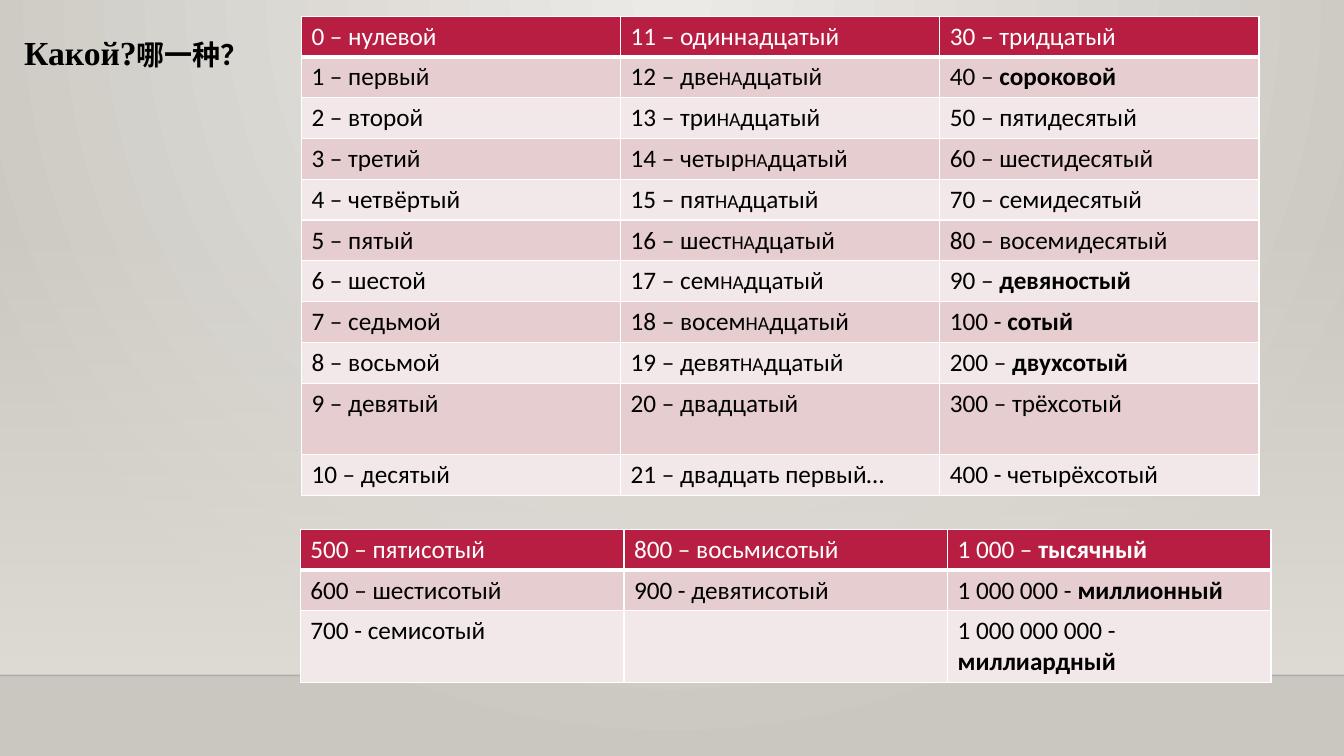
from dataclasses import dataclass

from lxml.etree import SubElement
from pptx import Presentation
from pptx.dml.color import RGBColor
from pptx.enum.shapes import MSO_CONNECTOR as Connector, MSO_SHAPE as Preset
from pptx.enum.text import MSO_ANCHOR as Anchor, MSO_AUTO_SIZE as AutoSize, PP_ALIGN as Align
from pptx.oxml.ns import qn
from pptx.slide import Slide
from pptx.table import _Cell as Cell
from pptx.util import Inches, Length, Pt

COLOURS = {
    "header": "B71E42",
    "band_dark": "E6CDCF",
    "band_light": "F3E8E9",
    "border": "FFFFFF",
    "header_text": "FFFFFF",
    "text": "000000",
    "glow": "ECEAE7",
    "wall": "CAC7C1",
    "floor": "DFDBD5",
    "horizon": "000001",
}
SLIDE_WIDTH, SLIDE_HEIGHT = Inches(13.333), Inches(7.5)
ROW, TALL_ROW = 5.4, 9.47
FLOOR_TOP, HORIZON = 29.47, 89.33


@dataclass
class NumberTable:
    """Position in percent of the slide; "|" parts runs, "*" marks a bold one."""
    left: float
    top: float
    width: float
    row_heights: list[float]
    rows: list[list[str]]


ORDINALS = NumberTable(22.43, 2.13, 71.25, [ROW] * 9 + [TALL_ROW, ROW], [
    ["0 – нулевой", "11 – одиннадцатый", "30 – тридцатый"],
    ["1 – первый", "12 – две|НА|дцатый", "40 – |*сороковой"],
    ["2 – второй", "13 – три|НА|дцатый", "50 – пятидесятый"],
    ["3 – третий", "14 – четыр|НА|дцатый", "60 – шестидесятый"],
    ["4 – четвёртый", "15 – пят|НА|дцатый", "70 – семидесятый"],
    ["5 – пятый", "16 – шест|НА|дцатый", "80 – восемидесятый"],
    ["6 – шестой", "17 – сем|НА|дцатый", "90 – |*девяностый"],
    ["7 – седьмой", "18 – восем|НА|дцатый", "100 - |*сотый"],
    ["8 – восьмой", "19 – девят|НА|дцатый", "200 – |*двухсотый"],
    ["9 – девятый", "20 – двадцатый", "300 – трёхсотый"],
    ["10 – десятый", "21 – двадцать первый…", "400 - четырёхсотый"],
])
LARGE_ORDINALS = NumberTable(22.35, 70, 72.23, [ROW, ROW, TALL_ROW], [
    ["500 – пятисотый", "800 – восьмисотый", "1 000 – |*тысячный"],
    ["600 – шестисотый", "900 - девятисотый", "1 000 000 - |*миллионный"],
    ["700 - семисотый", "", "1 000 000 000 - |*миллиардный"],
])


def across(percent: float) -> Length:
    return Length(round(SLIDE_WIDTH * percent / 100))


def down(percent: float) -> Length:
    return Length(round(SLIDE_HEIGHT * percent / 100))


def colour(name: str) -> RGBColor:
    return RGBColor.from_string(COLOURS[name])


def set_alpha(element, percent: int) -> None:
    rgb = next(element.iter(qn("a:srgbClr")))
    SubElement(rgb, qn("a:alpha"), val=str(percent * 1000))


def set_values(target, values: dict) -> None:
    for name, value in values.items():
        setattr(target, name, value)


def add_run(paragraph, text: str, size: int, font: str, bold: bool, colour_name: str) -> None:
    run = paragraph.add_run()
    run.text = text
    set_values(run.font, {"size": Pt(size), "name": font, "bold": bold})
    run.font.color.rgb = colour(colour_name)


def draw_background(slide: Slide) -> None:
    # Round glow from the top centre
    fill = slide.background.fill
    fill.gradient()
    for stop, name in zip(fill.gradient_stops, ("glow", "wall")):
        stop.color.rgb = colour(name)
    gradient = next(slide.element.iter(qn("a:gradFill")))
    gradient.remove(gradient.find(qn("a:lin")))
    circle = SubElement(gradient, qn("a:path"), path="circle")
    SubElement(circle, qn("a:fillToRect"), l="43000", t="0", r="43000", b="100000")

    # Wall fading in towards the floor
    wall = slide.shapes.add_shape(Preset.RECTANGLE, 0, down(FLOOR_TOP),
                                  SLIDE_WIDTH, down(HORIZON - FLOOR_TOP))
    wall.shadow.inherit = False
    wall.line.fill.background()
    wall.fill.gradient()
    wall.fill.gradient_angle = 270
    for stop in wall.fill.gradient_stops:
        stop.color.rgb = colour("floor")
    set_alpha(wall.element.spPr, 0)

    # Horizon line
    horizon = slide.shapes.add_connector(Connector.STRAIGHT, 0, down(HORIZON),
                                         SLIDE_WIDTH, down(HORIZON))
    horizon.line.width = Pt(1)
    horizon.line.color.rgb = colour("horizon")
    set_alpha(horizon.element.spPr, 20)
    SubElement(horizon.element.spPr, qn("a:effectLst"))


def draw_title(slide: Slide) -> None:
    title = slide.shapes.title
    set_values(title, {"left": across(1.05), "top": down(2.8),
                       "width": across(18.38), "height": down(7.07)})
    set_values(title.text_frame, {"word_wrap": False, "vertical_anchor": Anchor.TOP,
                                  "auto_size": AutoSize.SHAPE_TO_FIT_TEXT})
    paragraph = title.text_frame.paragraphs[0]
    set_values(paragraph, {"alignment": Align.LEFT, "line_spacing": 1.15,
                           "space_before": Pt(0), "space_after": Pt(10)})
    for text, size in (("Какой?", 24), ("哪一种？", 20)):
        add_run(paragraph, text, size, "Times New Roman", True, "text")


def set_borders(cell: Cell, bottom_width: int) -> None:
    properties = cell._tc.get_or_add_tcPr()
    widths = {"L": 1, "R": 1, "T": 1, "B": bottom_width}
    for index, (side, width) in enumerate(widths.items()):
        border = SubElement(properties, qn(f"a:ln{side}"), w=str(Pt(width)))
        fill = SubElement(border, qn("a:solidFill"))
        SubElement(fill, qn("a:srgbClr"), val=COLOURS["border"])
        properties.insert(index, border)


def fill_cell(cell: Cell, text: str, row: int) -> None:
    header = row == 0
    band = "band_dark" if row % 2 else "band_light"
    cell.fill.solid()
    cell.fill.fore_color.rgb = colour("header" if header else band)
    set_borders(cell, 3 if header else 1)
    paragraph = cell.text_frame.paragraphs[0]
    paragraph.font.size = Pt(18)
    for part in filter(None, text.split("|")):
        add_run(paragraph, part.lstrip("*"), 14 if part == "НА" else 18, "Calibri",
                part.startswith("*"), "header_text" if header else "text")


def draw_table(slide: Slide, numbers: NumberTable) -> None:
    column_count = len(numbers.rows[0])
    table = slide.shapes.add_table(
        len(numbers.rows), column_count, across(numbers.left), down(numbers.top),
        across(numbers.width), down(sum(numbers.row_heights))).table
    set_values(table, {"first_row": False, "horz_banding": False})
    for column in table.columns:
        column.width = across(numbers.width / column_count)
    for row, (height, texts) in enumerate(zip(numbers.row_heights, numbers.rows)):
        table.rows[row].height = down(height)
        for column, text in enumerate(texts):
            fill_cell(table.cell(row, column), text, row)


def main() -> None:
    presentation = Presentation()
    set_values(presentation, {"slide_width": SLIDE_WIDTH, "slide_height": SLIDE_HEIGHT})
    slide = presentation.slides.add_slide(presentation.slide_layouts.get_by_name("Title Only"))
    draw_background(slide)
    draw_title(slide)
    for numbers in (ORDINALS, LARGE_ORDINALS):
        draw_table(slide, numbers)
    presentation.save("out.pptx")


if __name__ == "__main__":
    main()
